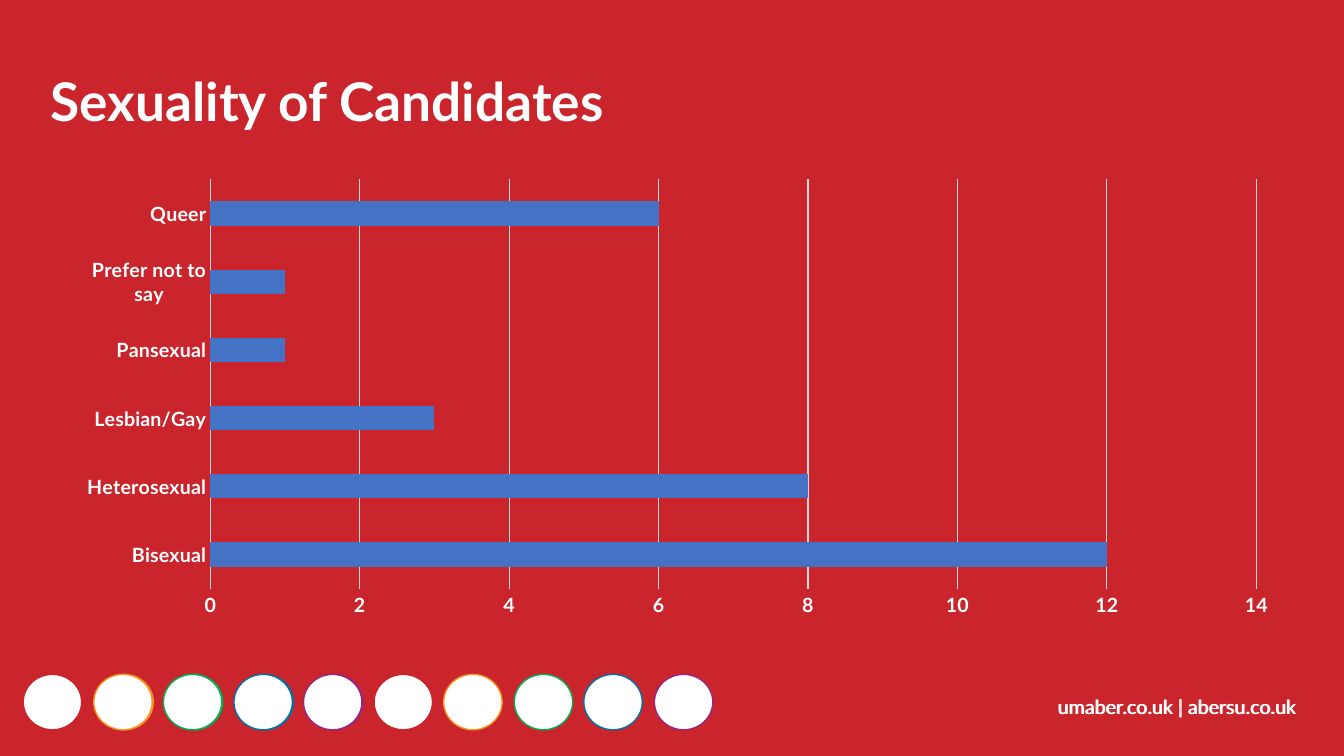
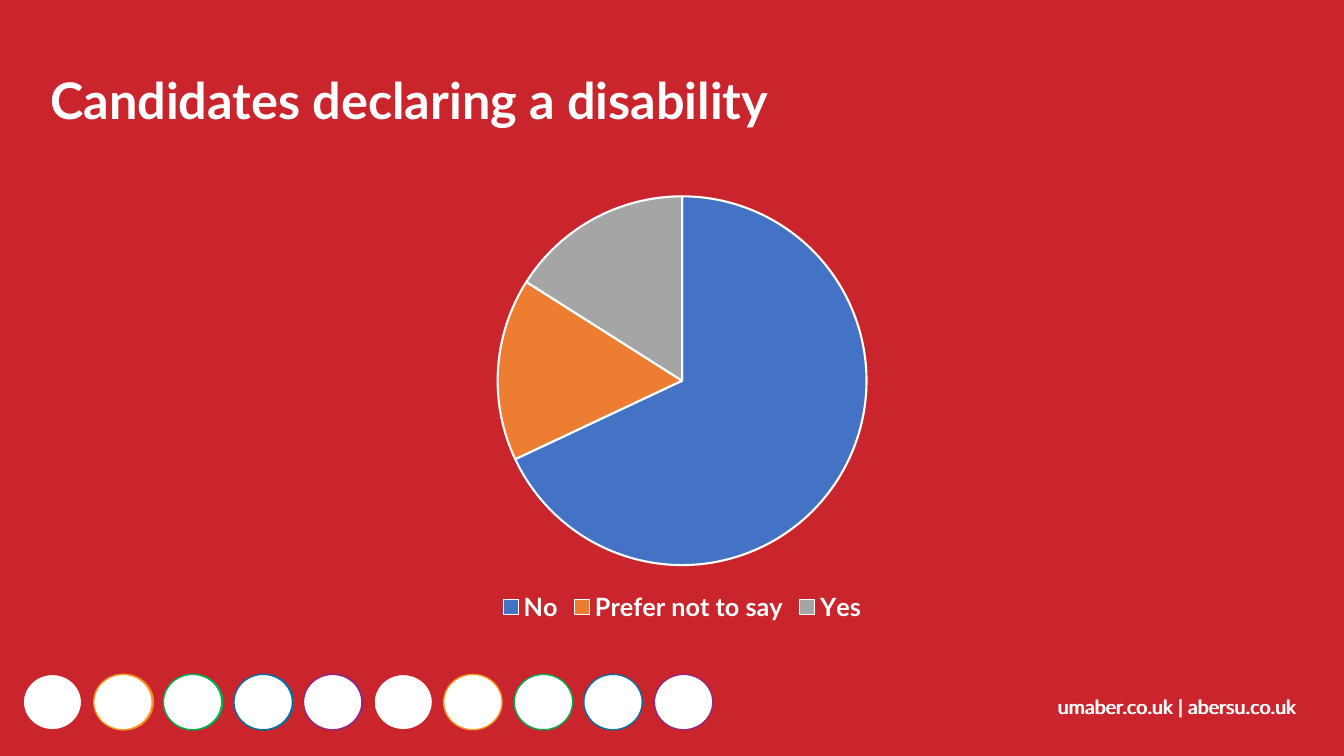
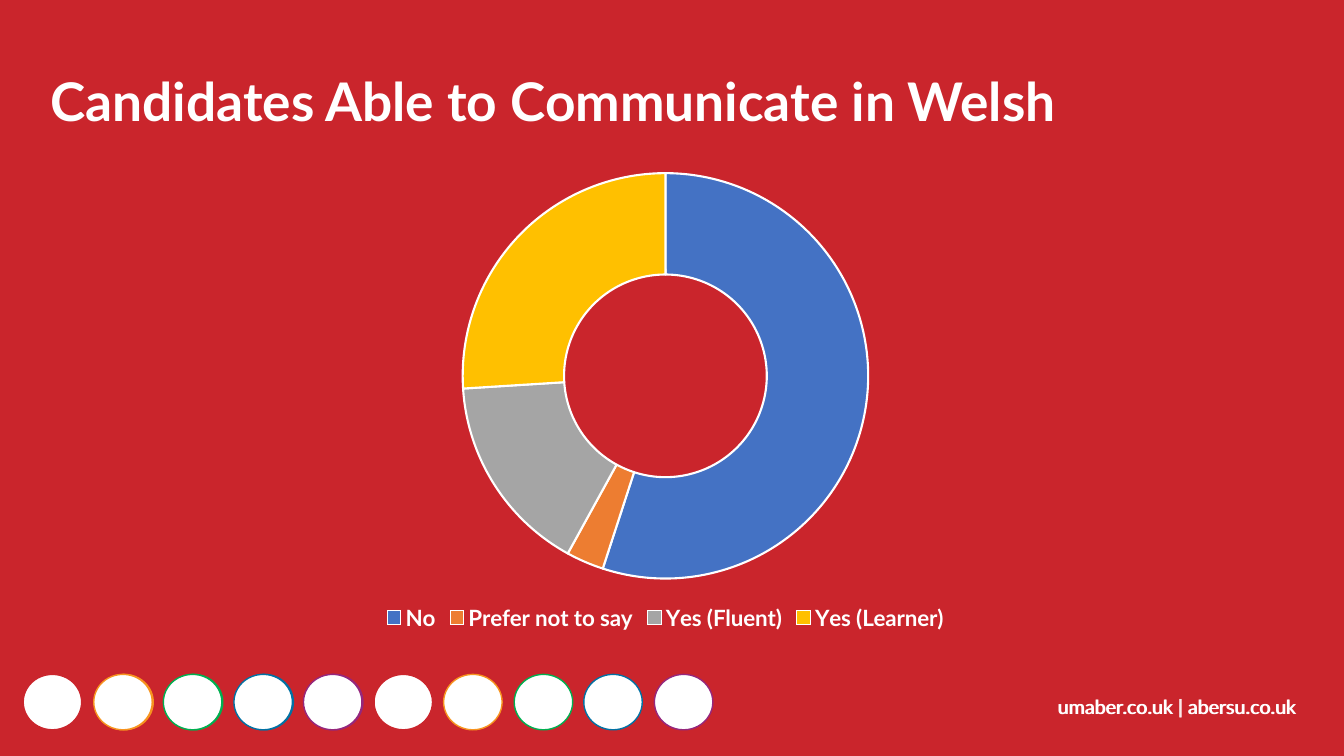
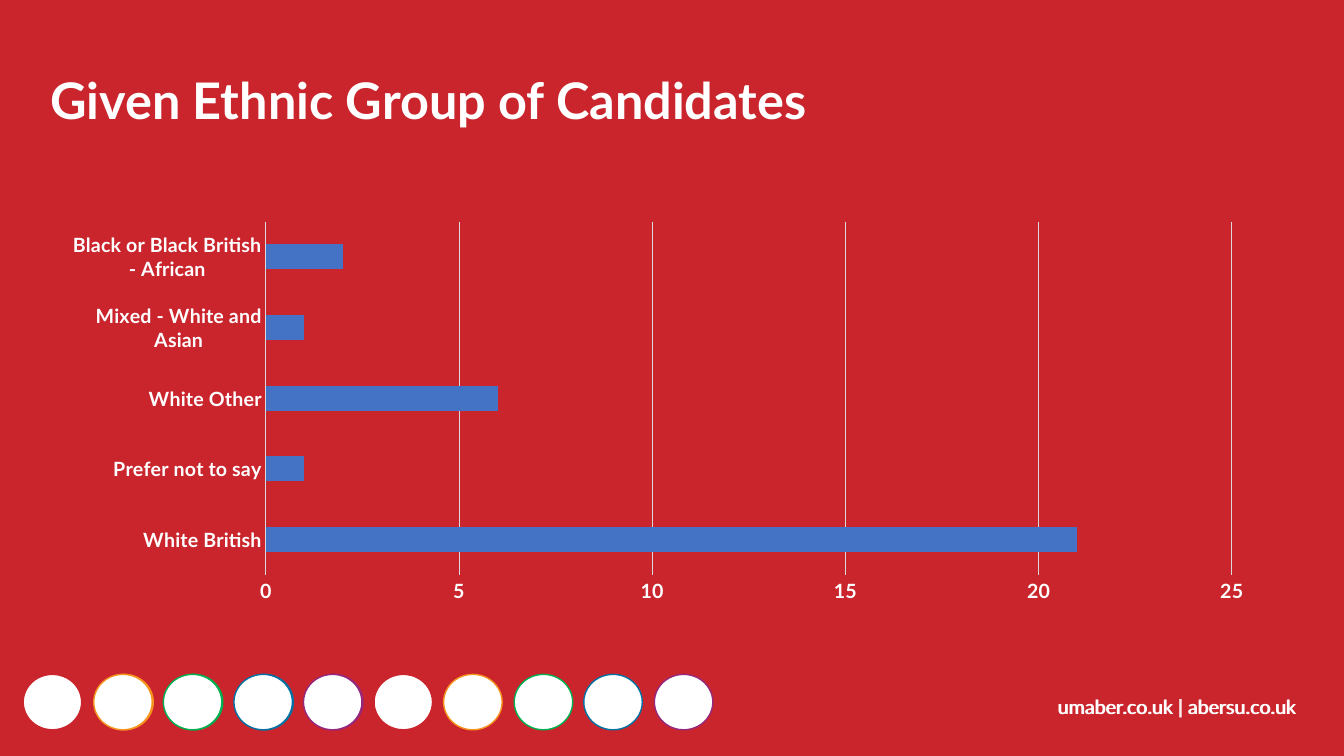
"""Build four slides with charts describing the election candidates."""
from dataclasses import dataclass

from lxml import etree
from pptx import Presentation
from pptx.chart.chart import Chart
from pptx.chart.data import CategoryChartData
from pptx.dml.color import RGBColor
from pptx.enum.chart import XL_CHART_TYPE, XL_LEGEND_POSITION, XL_TICK_MARK
from pptx.enum.shapes import MSO_SHAPE
from pptx.enum.text import MSO_ANCHOR
from pptx.oxml.ns import qn
from pptx.slide import Slide
from pptx.util import Emu, Pt

BAR = XL_CHART_TYPE.BAR_CLUSTERED
PIE = XL_CHART_TYPE.PIE
DOUGHNUT = XL_CHART_TYPE.DOUGHNUT
LEGEND_BOTTOM = XL_LEGEND_POSITION.BOTTOM
NO_TICK = XL_TICK_MARK.NONE
OVAL = MSO_SHAPE.OVAL
TOP = MSO_ANCHOR.TOP

EMU_PER_PX = 9144
SLIDE_WIDTH, SLIDE_HEIGHT = 1333, 750
FONT = "Lato"
COLORS = {
    "red": "CA252C",
    "orange": "F7941F",
    "green": "00AF50",
    "blue": "0171A3",
    "purple": "95277D",
    "white": "FFFFFF",
    "grid": "D9D9D9",
}
BADGE_COLORS = ("red", "orange", "green", "blue", "purple")
SLICE_COLORS = ("4472C4", "ED7D31", "A5A5A5", "FFC000")
BADGE_LEFT, BADGE_TOP, BADGE_WIDTH, BADGE_HEIGHT = 23, 669, 58, 55
BADGE_DOUBLE_STEP = 139
BADGE_COUNT = 10
FOOTER = "umaber.co.uk | abersu.co.uk"
FOOTER_LEFTS = (1039, 1040)
GAP_WIDTH = 182
HOLE_SIZE = 75


@dataclass(frozen=True)
class Box:
    left: int
    top: int
    width: int
    height: int

    def emu(self) -> tuple[Emu, Emu, Emu, Emu]:
        return px(self.left), px(self.top), px(self.width), px(self.height)


@dataclass(frozen=True)
class ChartSlide:
    title: str
    title_size: int
    title_width: int
    kind: XL_CHART_TYPE
    box: Box
    label_size: int
    counts: dict[str, int]


CHART_SLIDES = (
    ChartSlide(
        "Sexuality of Candidates", 38, 912, BAR, Box(62, 169, 1220, 452), 14,
        {"Bisexual": 12, "Heterosexual": 8, "Lesbian/Gay": 3, "Pansexual": 1,
         "Prefer not to say": 1, "Queer": 6},
    ),
    ChartSlide(
        "Candidates declaring a disability", 36, 1142, PIE, Box(119, 181, 1115, 441), 18,
        {"No": 68, "Prefer not to say": 16, "Yes": 16},
    ),
    ChartSlide(
        "Candidates Able to Communicate in Welsh", 38, 1142, DOUGHNUT,
        Box(40, 158, 1240, 472), 16,
        {"No": 55, "Prefer not to say": 3, "Yes (Fluent)": 16, "Yes (Learner)": 26},
    ),
    ChartSlide(
        "Given Ethnic Group of Candidates", 36, 1142, BAR, Box(71, 212, 1186, 394), 14,
        {"White British": 21, "Prefer not to say": 1, "White Other": 6,
         "Mixed - White and Asian": 1, "Black or Black British - African": 2},
    ),
)


def px(length: int) -> Emu:
    return Emu(length * EMU_PER_PX)


def rgb(name: str) -> RGBColor:
    return RGBColor.from_string(COLORS[name])


def add_text(slide: Slide, text: str, box: Box, *, size: int, bold: bool = False,
             line_spacing: float = 1.0) -> None:
    frame = slide.shapes.add_textbox(*box.emu()).text_frame
    frame.word_wrap = True
    frame.vertical_anchor = TOP
    paragraph = frame.paragraphs[0]
    paragraph.line_spacing = line_spacing
    run = paragraph.add_run()
    run.text = text
    run.font.name = FONT
    run.font.size = Pt(size)
    run.font.bold = bold
    run.font.color.rgb = rgb("white")


def add_badge(slide: Slide, left: int, fill: str, outline: str) -> None:
    badge = slide.shapes.add_shape(
        OVAL, *Box(left, BADGE_TOP, BADGE_WIDTH, BADGE_HEIGHT).emu())
    badge.shadow.inherit = False
    badge.fill.solid()
    badge.fill.fore_color.rgb = rgb(fill)
    badge.line.color.rgb = rgb(outline)
    badge.line.width = Pt(1)


def add_footer(slide: Slide) -> None:
    for left in FOOTER_LEFTS:
        add_text(slide, FOOTER, Box(left, 684, 280, 34), size=14)
    for index in range(BADGE_COUNT):
        left = BADGE_LEFT + (index * BADGE_DOUBLE_STEP + 1) // 2
        accent = BADGE_COLORS[index % len(BADGE_COLORS)]
        if 0 < index < len(BADGE_COLORS):
            add_badge(slide, left + 1, accent, accent)
        add_badge(slide, left, "white", accent)


def style_bars(chart: Chart) -> None:
    plot = chart.plots[0]
    plot.gap_width = GAP_WIDTH
    plot.vary_by_categories = False
    bars = plot.series[0].format.fill
    bars.solid()
    bars.fore_color.rgb = RGBColor.from_string(SLICE_COLORS[0])
    chart.has_legend = False
    for axis in (chart.category_axis, chart.value_axis):
        axis.major_tick_mark = axis.minor_tick_mark = NO_TICK
    chart.value_axis.has_major_gridlines = True
    chart.value_axis.format.line.fill.background()
    for line in (chart.category_axis.format.line,
                 chart.value_axis.major_gridlines.format.line):
        line.color.rgb = rgb("grid")
        line.width = Pt(0.75)


def style_slices(chart: Chart, slice_count: int) -> None:
    plot = chart.plots[0]
    plot.vary_by_categories = True
    for index, color in enumerate(SLICE_COLORS[:slice_count]):
        slice_format = plot.series[0].points[index].format
        slice_format.fill.solid()
        slice_format.fill.fore_color.rgb = RGBColor.from_string(color)
        slice_format.line.color.rgb = rgb("white")
        slice_format.line.width = Pt(1.5)
    chart.has_legend = True
    chart.legend.position = LEGEND_BOTTOM
    chart.legend.include_in_layout = False


def set_hole_size(chart: Chart) -> None:
    ring = chart.element.find(".//" + qn("c:doughnutChart"))
    hole = ring.find(qn("c:holeSize"))
    if hole is None:
        hole = etree.SubElement(ring, qn("c:holeSize"))
    hole.set("val", str(HOLE_SIZE))


def add_candidate_chart(slide: Slide, content: ChartSlide) -> None:
    data = CategoryChartData()
    data.categories = list(content.counts)
    data.add_series("Series 1", list(content.counts.values()))
    chart = slide.shapes.add_chart(content.kind, *content.box.emu(), data).chart
    chart.has_title = False
    chart.font.name = FONT
    chart.font.size = Pt(content.label_size)
    chart.font.bold = True
    chart.font.color.rgb = rgb("white")
    if content.kind == BAR:
        style_bars(chart)
    else:
        style_slices(chart, len(content.counts))
    if content.kind == DOUGHNUT:
        set_hole_size(chart)


def main() -> None:
    deck = Presentation()
    deck.slide_width, deck.slide_height = px(SLIDE_WIDTH), px(SLIDE_HEIGHT)
    background = deck.slide_master.background.fill
    background.solid()
    background.fore_color.rgb = rgb("red")
    for content in CHART_SLIDES:
        slide = deck.slides.add_slide(deck.slide_layouts[6])
        add_footer(slide)
        add_text(slide, content.title, Box(40, 70, content.title_width, 88),
                 size=content.title_size, bold=True, line_spacing=0.9)
        add_candidate_chart(slide, content)
    deck.save("out.pptx")


if __name__ == "__main__":
    main()
